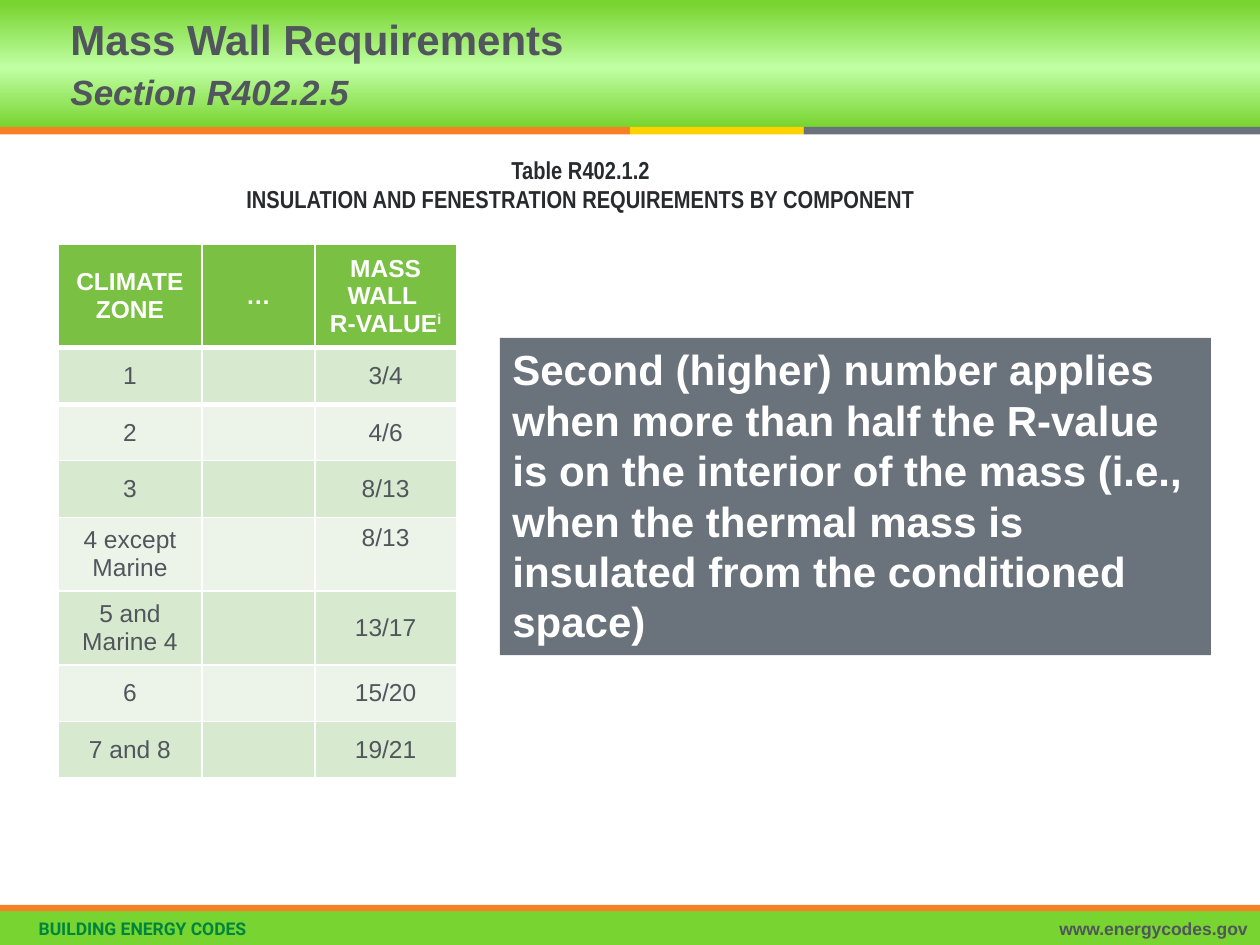
from copy import deepcopy
from lxml.etree import SubElement
from pptx import Presentation
from pptx.dml.color import RGBColor
from pptx.enum.shapes import MSO_SHAPE as Shape
from pptx.enum.text import MSO_ANCHOR as Anchor, PP_ALIGN as Align
from pptx.oxml.ns import qn
from pptx.util import Cm, Pt

GREEN = RGBColor(0x78, 0xD4, 0x30)
LIME = RGBColor(0xC0, 0xFF, 0xA4)
ORANGE = RGBColor(0xF5, 0x80, 0x25)
YELLOW = RGBColor(0xFF, 0xD2, 0x00)
SLATE = RGBColor(0x6A, 0x73, 0x7B)
GREY = RGBColor(0x50, 0x56, 0x5C)
INK = RGBColor(0x28, 0x2B, 0x2E)
FOREST = RGBColor(0x00, 0x85, 0x3F)
WHITE = RGBColor(0xFF, 0xFF, 0xFF)
HEAD = RGBColor(0x7A, 0xC1, 0x43)
BANDS = (RGBColor(0xD7, 0xE9, 0xCF), RGBColor(0xEC, 0xF4, 0xE9))

WIDTH = 25.4
COLS = (2.9, 2.28, 2.85)
TITLES = ("CLIMATE ZONE", "…", "MASS WALL \vR-VALUE")
ZONES = (
    ("1", "3/4"),
    ("2", "4/6"),
    ("3", "8/13"),
    ("4 except Marine", "8/13"),
    ("5 and Marine 4", "13/17"),
    ("6", "15/20"),
    ("7 and 8", "19/21"),
)
NOTE = ("Second (higher) number applies when more than half the R-value is on "
        "the interior of the mass (i.e., when the thermal mass is insulated "
        "from the conditioned space)")


def style_run(run, size, color, bold, font):
    run.font.name = font
    run.font.size = Pt(size)
    run.font.bold = bold
    run.font.color.rgb = color


def write(frame, text, size, color, bold=True, font="Arial", align=Align.LEFT):
    frame.word_wrap = True
    para = frame.paragraphs[0]
    para.text = text
    para.alignment = align
    for run in para.runs:
        style_run(run, size, color, bold, font)
    return para


def add_bar(slide, x, y, w, h, color):
    bar = slide.shapes.add_shape(Shape.RECTANGLE, Cm(x), Cm(y), Cm(w), Cm(h))
    bar.shadow.inherit = False
    bar.line.fill.background()
    bar.fill.solid()
    bar.fill.fore_color.rgb = color
    return bar


def add_text(slide, x, y, w, h, text, size, color, **style):
    box = slide.shapes.add_textbox(Cm(x), Cm(y), Cm(w), Cm(h))
    write(box.text_frame, text, size, color, **style)
    return box.text_frame


def add_band(slide):
    """Draw the header with its green, lime, green gradient."""
    fill = add_bar(slide, 0, 0, WIDTH, 2.57, GREEN).fill
    fill.gradient()
    fill.gradient_angle = 90
    last = fill.gradient_stops[1]._gs
    last.addnext(deepcopy(last))
    stops = ((0, GREEN), (0.47, LIME), (0.97, GREEN))
    for stop, (place, color) in zip(fill.gradient_stops, stops):
        stop.position = place
        stop.color.rgb = color


def add_frame(slide):
    """Draw the header, the colour strip and the footer."""
    add_band(slide)
    x = 0
    for w, color in ((12.7, ORANGE), (3.5, YELLOW), (9.2, SLATE)):
        add_bar(slide, x, 2.56, w, 0.15, color)
        x += w
    add_bar(slide, 0, 18.36, WIDTH, 0.69, GREEN)
    add_bar(slide, 0, 18.24, WIDTH, 0.13, ORANGE)
    left = add_text(slide, 0.18, 18.39, 15, 0.66, "BUILDING ENERGY CODES",
                    10, FOREST, font="Roboto")
    left.margin_left = Cm(0.6)
    add_text(slide, 15.2, 18.39, 10.2, 0.66, "www.energycodes.gov",
             10, GREY, align=Align.RIGHT)


def fill_cell(cell, text, back, color, bold):
    cell.fill.solid()
    cell.fill.fore_color.rgb = back
    cell.vertical_anchor = Anchor.MIDDLE
    cell.margin_left = cell.margin_right = Cm(0.28)
    cell.margin_top = cell.margin_bottom = Cm(0.15)
    return write(cell.text_frame, text, 14, color, bold, align=Align.CENTER)


def add_edge(cell, side, width):
    """Give one side of a cell a white border."""
    props = cell._tc.get_or_add_tcPr()
    line = SubElement(props, qn(side), w=str(Pt(width)))
    paint = SubElement(line, qn("a:solidFill"))
    SubElement(paint, qn("a:srgbClr"), val=str(WHITE))
    props.insert(0, line)


def add_zones(slide):
    """Add the table of R-values by climate zone."""
    table = slide.shapes.add_table(
        len(ZONES) + 1, len(COLS), Cm(1.17), Cm(4.93),
        Cm(sum(COLS)), Cm(10.7)).table
    for col, w in zip(table.columns, COLS):
        col.width = Cm(w)
    table.rows[0].height = Cm(2.06)
    for c, title in enumerate(TITLES):
        para = fill_cell(table.cell(0, c), title, HEAD, WHITE, True)
        add_edge(table.cell(0, c), "a:lnB", 3)
    mark = para.add_run()
    mark.text = "i"
    style_run(mark, 14, WHITE, True, "Arial")
    mark._r.get_or_add_rPr().set("baseline", "30000")

    for r, (zone, value) in enumerate(ZONES, 1):
        table.rows[r].height = Cm(1.47 if "Marine" in zone else 1.14)
        for c, text in enumerate((zone, "", value)):
            fill_cell(table.cell(r, c), text, BANDS[(r - 1) % 2], GREY, False)
    for c in range(len(COLS)):
        add_edge(table.cell(1, c), "a:lnT", 3)
    table.cell(4, 2).vertical_anchor = Anchor.TOP


def add_title(slide):
    frame = add_text(slide, 1.17, 0, 15.06, 2.57,
                     "Mass Wall Requirements\vSection R402.2.5", 24, GREY)
    frame.vertical_anchor = Anchor.MIDDLE
    para = frame.paragraphs[0]
    para.line_spacing = Pt(28)
    para.runs[1].font.size = Pt(20)
    para.runs[1].font.italic = True


def add_note(slide):
    box = add_bar(slide, 10.08, 6.81, 14.33, 6.4, SLATE)
    box.text_frame.vertical_anchor = Anchor.TOP
    write(box.text_frame, NOTE, 24, WHITE)


def add_caption(slide):
    add_text(
        slide, 4.58, 3, 14.25, 1.04,
        "Table R402.1.2\vINSULATION AND FENESTRATION REQUIREMENTS BY COMPONENT",
        14, INK, font="Arial Narrow", align=Align.CENTER)


def main():
    deck = Presentation()
    deck.slide_width = Cm(WIDTH)
    deck.slide_height = Cm(19.05)
    slide = deck.slides.add_slide(deck.slide_layouts[6])
    add_frame(slide)
    add_zones(slide)
    add_title(slide)
    add_note(slide)
    add_caption(slide)
    deck.save("out.pptx")


if __name__ == "__main__":
    main()
